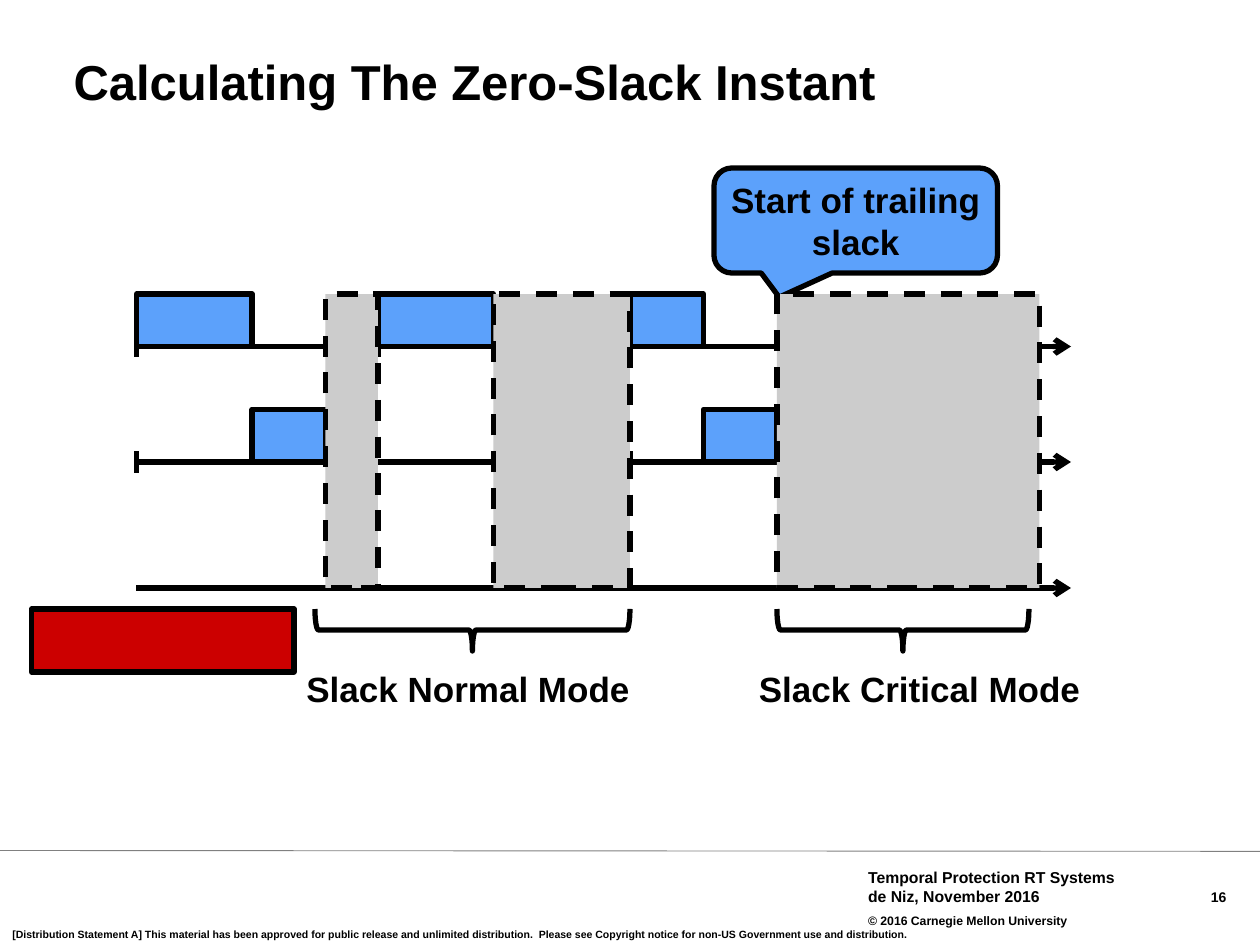
import pptx
import pptx.util
import pptx.dml.color
import pptx.enum.dml
import pptx.enum.shapes
import pptx.enum.text
from lxml import etree

Pt = pptx.util.Pt
SHAPE = pptx.enum.shapes.MSO_SHAPE
ALIGN = pptx.enum.text.PP_ALIGN
ANCHOR = pptx.enum.text.MSO_ANCHOR
COLORS = {"black": "000000", "rule": "808080", "job": "5CA1FB",
          "slack": "CCCCCC", "overrun": "CC0000"}


def rgb(name):
    return pptx.dml.color.RGBColor.from_string(COLORS[name])


def write(tf, text, size=20, sizes=None, align=ALIGN.LEFT, anchor=ANCHOR.TOP,
          insets=(0, 0, 0, 0), wrap=True, spacing=None):
    tf.auto_size = pptx.enum.text.MSO_AUTO_SIZE.NONE
    tf.word_wrap = wrap
    tf.vertical_anchor = anchor
    tf.margin_left, tf.margin_top, tf.margin_right, tf.margin_bottom = map(Pt, insets)
    tf.text = text
    for i, p in enumerate(tf.paragraphs):
        p.alignment = align
        p.space_before = Pt(0)
        if spacing:
            p.line_spacing = spacing[i]
        for r in p.runs:
            r.font.name = "Arial"
            r.font.size = Pt(sizes[i] if sizes else size)
            r.font.bold = True
            r.font.color.rgb = rgb("black")


def add_text(s, box, text, **fmt):
    write(s.shapes.add_textbox(*map(Pt, box)).text_frame, text, **fmt)


def add_line(s, x1, y1, x2, y2, color="black", width=3, arrow=False):
    c = s.shapes.add_connector(pptx.enum.shapes.MSO_CONNECTOR.STRAIGHT,
                               Pt(x1), Pt(y1), Pt(x2), Pt(y2))
    c.line.color.rgb = rgb(color)
    c.line.width = Pt(width)
    ns = pptx.oxml.ns.qn
    if arrow:
        etree.SubElement(c.line._get_or_add_ln(), ns("a:tailEnd"), type="arrow")
    etree.SubElement(c._element.spPr, ns("a:effectLst"))


def add_shape(s, kind, box, fill=None, dashed=False):
    sp = s.shapes.add_shape(kind, *map(Pt, box))
    sp.shadow.inherit = False
    if fill:
        sp.fill.solid()
        sp.fill.fore_color.rgb = rgb(fill)
    else:
        sp.fill.background()
    sp.line.color.rgb = rgb("black")
    sp.line.width = Pt(3)
    if dashed:
        sp.line.dash_style = pptx.enum.dml.MSO_LINE.DASH
    return sp


def add_slack(s, left, right):
    add_shape(s, SHAPE.RECTANGLE, (left, 168, right - left, 168), "slack", dashed=True)


def add_brace(s, left, right, top=348, depth=24):
    length = right - left
    x = (left + right - depth) / 2
    y = top + (depth - length) / 2
    add_shape(s, SHAPE.LEFT_BRACE, (x, y, depth, length)).rotation = 270


def add_footer(s):
    add_text(s, (642, 504.5, 66, 30), "16", size=8, align=ALIGN.RIGHT,
             insets=(0, 0, 7.2, 3.6), spacing=[Pt(13)])
    add_line(s, 0, 486, 720, 486.5, "rule", 0.5)
    add_text(s, (492.5, 492, 186, 42),
             "Temporal Protection RT Systems\nde Niz, November 2016\n"
             "© 2016 Carnegie Mellon University",
             sizes=[9, 9, 7], anchor=ANCHOR.MIDDLE, insets=(3.6,) * 4,
             spacing=[1.0, 1.0, 1.5])
    add_text(s, (0, 527, 546, 14.4),
             "[Distribution Statement A] This material has been approved for public "
             "release and unlimited distribution.  Please see Copyright notice for "
             "non-US Government use and distribution.",
             size=6, insets=(7.2, 3.6, 7.2, 3.6))


def add_title(s, text):
    sp = s.shapes.title
    sp.left, sp.top, sp.width, sp.height = map(Pt, (42, 33, 642, 30))
    write(sp.text_frame, text, size=28, spacing=[0.9])


def add_timelines(s):
    for y in (198, 264, 336):
        add_line(s, 78, y, 612, y, arrow=True)
    for y, releases in ((198, (78, 216, 360)), (264, (78, 360))):
        for x in releases:
            add_line(s, x, y - 6, x, y + 6)
    jobs = ((198, 78, 144), (264, 144, 186), (198, 216, 282),
            (198, 360, 402), (264, 402, 444))
    for y, start, end in jobs:
        add_shape(s, SHAPE.RECTANGLE, (start, y - 30, end - start, 30), "job")


def add_callout(s):
    sp = add_shape(s, SHAPE.ROUNDED_RECTANGULAR_CALLOUT, (408, 96, 162, 60), "job")
    for i, value in enumerate((-0.27, 0.73, 0.17)):
        sp.adjustments[i] = value
    write(sp.text_frame, "Start of trailing\vslack", align=ALIGN.CENTER,
          anchor=ANCHOR.MIDDLE, wrap=False)


def main():
    prs = pptx.Presentation()
    prs.slide_width, prs.slide_height = Pt(720), Pt(540)
    s = prs.slides.add_slide(prs.slide_layouts[5])
    add_footer(s)
    add_title(s, "Calculating The Zero-Slack Instant")
    add_timelines(s)
    add_slack(s, 186, 216)
    add_slack(s, 282, 360)
    add_callout(s)
    add_slack(s, 444, 594)
    add_shape(s, SHAPE.RECTANGLE, (18, 348, 150, 36), "overrun")
    add_brace(s, 444, 588)
    add_brace(s, 180, 360)
    for x, text in ((167.5, "Slack Normal Mode"), (425.5, "Slack Critical Mode")):
        add_text(s, (x, 378, 200, 31.5), text, align=ALIGN.CENTER,
                 insets=(7.2, 3.6, 7.2, 3.6), wrap=False)
    prs.save("out.pptx")


if __name__ == "__main__":
    main()
